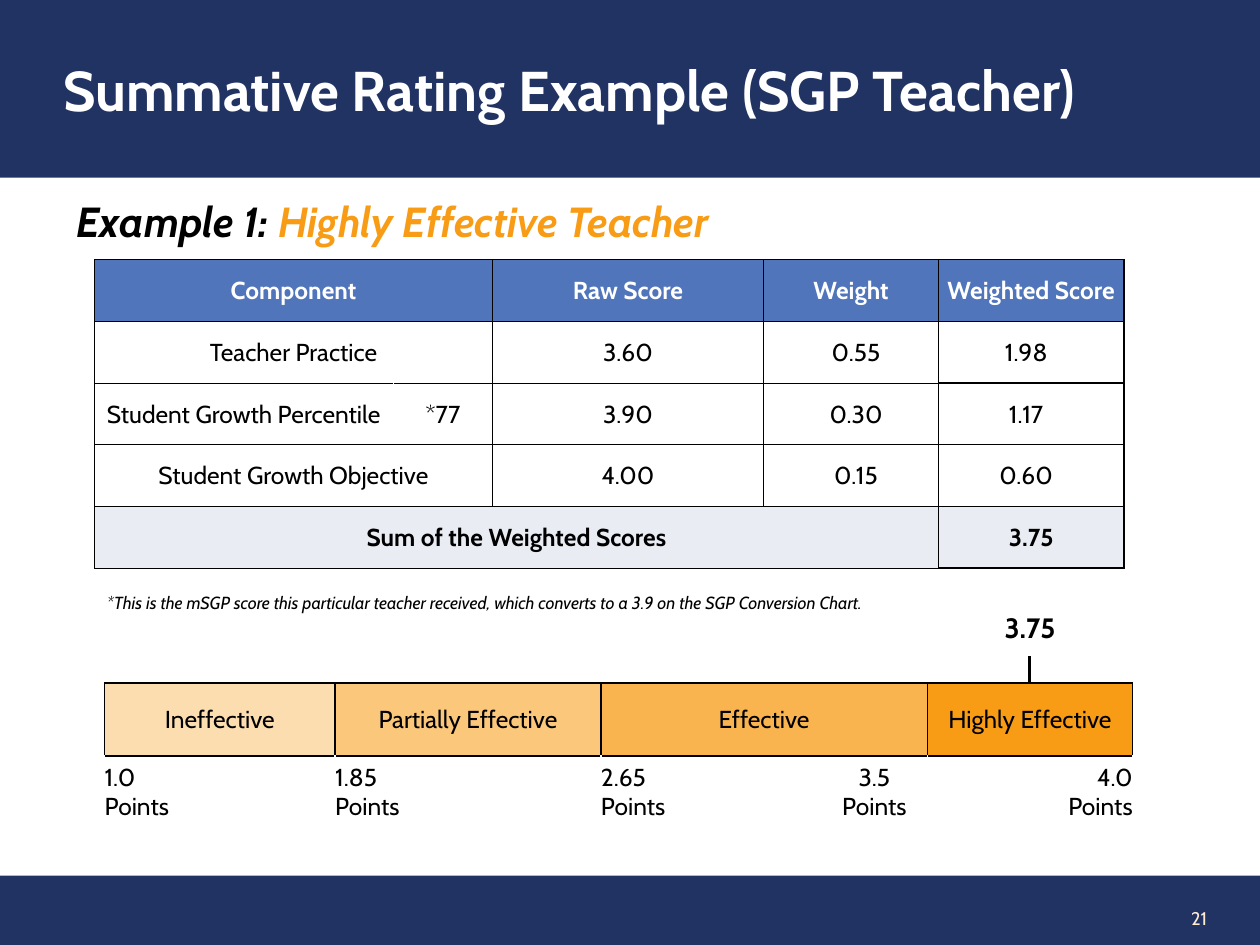
from lxml.etree import SubElement
from pptx import Presentation
from pptx.dml.color import RGBColor
from pptx.enum.shapes import MSO_CONNECTOR, MSO_SHAPE
from pptx.enum.text import MSO_ANCHOR as ANCHOR, PP_ALIGN as ALIGN
from pptx.oxml import parse_xml
from pptx.oxml.ns import nsdecls, qn
from pptx.util import Inches, Pt

NAVY, ORANGE, BLACK, WHITE = "213363", "F89C15", "000000", "FFFFFF"
rgb = RGBColor.from_string


def write(frame, text, size, color=BLACK, bold=False, italic=False, align=ALIGN.LEFT):
    frame.text = text
    frame.word_wrap = True
    for paragraph in frame.paragraphs:
        paragraph.alignment = align
        for run in paragraph.runs:
            font = run.font
            font.name, font.size = "Cabin", Pt(size)
            font.bold, font.italic = bold, italic
            font.color.rgb = rgb(color)


def style_cell(cell, margins, fill, borders):
    """Margins run left, top, right, bottom; borders map a side to (color, points)."""
    (cell.margin_left, cell.margin_top,
     cell.margin_right, cell.margin_bottom) = map(Inches, margins)
    cell.fill.solid()
    cell.fill.fore_color.rgb = rgb(fill)
    for place, side in enumerate("LRTB"):
        color, width = borders[side]
        cell._tc.get_or_add_tcPr().insert(place, parse_xml(
            f'<a:ln{side} {nsdecls("a")} w="{Pt(width)}"><a:solidFill>'
            f'<a:srgbClr val="{color}"/></a:solidFill></a:ln{side}>'))


prs = Presentation()
prs.slide_width, prs.slide_height = Inches(10), Inches(7.5)
slide = prs.slides.add_slide(prs.slide_layouts[6])
shapes = slide.shapes

# Title and footer bands
bands = []
for top, height in [(0, 1.41), (6.95, 0.59)]:
    band = shapes.add_shape(MSO_SHAPE.RECTANGLE, 0, Inches(top), Inches(10.01), Inches(height))
    band.shadow.inherit = False
    band.fill.solid()
    band.fill.fore_color.rgb = rgb(NAVY)
    band.line.fill.background()
    bands.append(band)
title = bands[0].text_frame
title.margin_left = Inches(0.5)
title.vertical_anchor = ANCHOR.MIDDLE
write(title, "Summative Rating Example (SGP Teacher)", 32, WHITE, bold=True)

# Page number, heading, footnote and score marker
texts = [
    (8.22, 7.09, 1.46, 0.4, "21", 10.5, "FEEBD0", False, False, ALIGN.RIGHT),
    (0.51, 1.5, 6, 0.5, "Example 1:", 24, BLACK, True, True, ALIGN.LEFT),
    (0.75, 4.65, 7, 0.27, "*This is the mSGP score this particular teacher received, "
     "which converts to a 3.9 on the SGP Conversion Chart.", 10, BLACK, False, True, ALIGN.LEFT),
    (7.68, 4.8, 0.99, 0.37, "3.75", 16, BLACK, True, False, ALIGN.CENTER),
]
frames = []
for left, top, width, height, *content in texts:
    frame = shapes.add_textbox(*map(Inches, (left, top, width, height))).text_frame
    write(frame, *content)
    frames.append(frame)
page_number, heading = frames[:2]
page_number.vertical_anchor = ANCHOR.MIDDLE
rating = heading.paragraphs[0].add_run()
rating.text = " Highly Effective Teacher"
rating.font.name, rating.font.size = "Cabin", Pt(24)
rating.font.bold = rating.font.italic = True
rating.font.color.rgb = rgb(ORANGE)

# Score table
rows = [
    ["Component", None, "Raw Score", "Weight", "Weighted Score"],
    ["Teacher Practice", None, "3.60", "0.55", "1.98"],
    ["Student Growth Percentile", "*77", "3.90", "0.30", "1.17"],
    ["Student Growth Objective", None, "4.00", "0.15", "0.60"],
    ["Sum of the Weighted Scores", None, None, None, "3.75"],
]
fills = ["5075BB", WHITE, WHITE, WHITE, "E9ECF3"]
scores = shapes.add_table(5, 5, Inches(0.75), Inches(2.06), Inches(8.17), Inches(2.45)).table
scores.first_row = scores.horz_banding = False
for column, width in zip(scores.columns, [2.37, 0.79, 2.15, 1.39, 1.47]):
    column.width = Inches(width)
for r, row in enumerate(rows):
    for c, text in enumerate(row):
        cell = scores.cell(r, c)
        body = 0 < r < 4
        margins = (0.09 if body and c == 3 else 0.01, 0.01, 0.09 if body and c == 4 else 0.01, 0)
        borders = dict.fromkeys("LRTB", (BLACK, 0.5))
        if c == 4:
            borders.update(dict.fromkeys("RTB", (BLACK, 1)))
        if r == 2 and c < 2:
            borders["RL"[c]] = (WHITE, 0.5)
        style_cell(cell, margins, fills[r], borders)
        cell.vertical_anchor = ANCHOR.MIDDLE
        if text:
            write(cell.text_frame, text, 14, WHITE if r == 0 else BLACK,
                  bold=not body, align=ALIGN.CENTER)
for r, last in [(0, 1), (1, 1), (3, 1), (4, 3)]:
    scores.cell(r, 0).merge(scores.cell(r, last))

# Rating scale: name, opacity in percent, points below, alignment
levels = [
    ("Ineffective", 34, "1.0\nPoints", ALIGN.LEFT),
    ("Partially Effective", 56, "1.85\nPoints", ALIGN.LEFT),
    ("Effective", 75, "2.65\t3.5\nPoints\tPoints", ALIGN.LEFT),
    ("Highly Effective", 100, "4.0\nPoints", ALIGN.RIGHT),
]
scale = shapes.add_table(2, 4, Inches(0.83), Inches(5.42), Inches(8.17), Inches(1.25)).table
scale.first_row = scale.horz_banding = False
scale.rows[0].height, scale.rows[1].height = Inches(0.58), Inches(0.67)
for c, (width, level) in enumerate(zip([1.83, 2.11, 2.59, 1.63], levels)):
    name, opacity, points, align = level
    scale.columns[c].width = Inches(width)
    box, label = scale.cell(0, c), scale.cell(1, c)

    style_cell(box, (0.1, 0.05, 0.1, 0.05), ORANGE, dict.fromkeys("LRTB", (BLACK, 1)))
    box.vertical_anchor = ANCHOR.MIDDLE
    write(box.text_frame, name, 14, align=ALIGN.CENTER)
    if opacity < 100:
        tint = box._tc.tcPr.find(qn("a:solidFill")).find(qn("a:srgbClr"))
        SubElement(tint, qn("a:alpha"), val=str(opacity * 1000))

    borders = dict.fromkeys("LRB", (WHITE, 1))
    style_cell(label, (0, 0.05, 0, 0), WHITE, {**borders, "T": (BLACK, 1)})
    write(label.text_frame, points, 14, align=align)
    if "\t" in points:
        for paragraph in label.text_frame.paragraphs:
            tabs = SubElement(paragraph._p.get_or_add_pPr(), qn("a:tabLst"))
            SubElement(tabs, qn("a:tab"), pos=str(Inches(2.17)), algn="ctr")

# Tick from the score to the scale
tick = shapes.add_connector(MSO_CONNECTOR.STRAIGHT, Inches(8.17), Inches(5.21),
                            Inches(8.17), Inches(5.42))
tick.line.color.rgb = rgb(BLACK)
tick.line.width = Pt(2)
SubElement(tick._element.spPr, qn("a:effectLst"))

prs.save("out.pptx")
